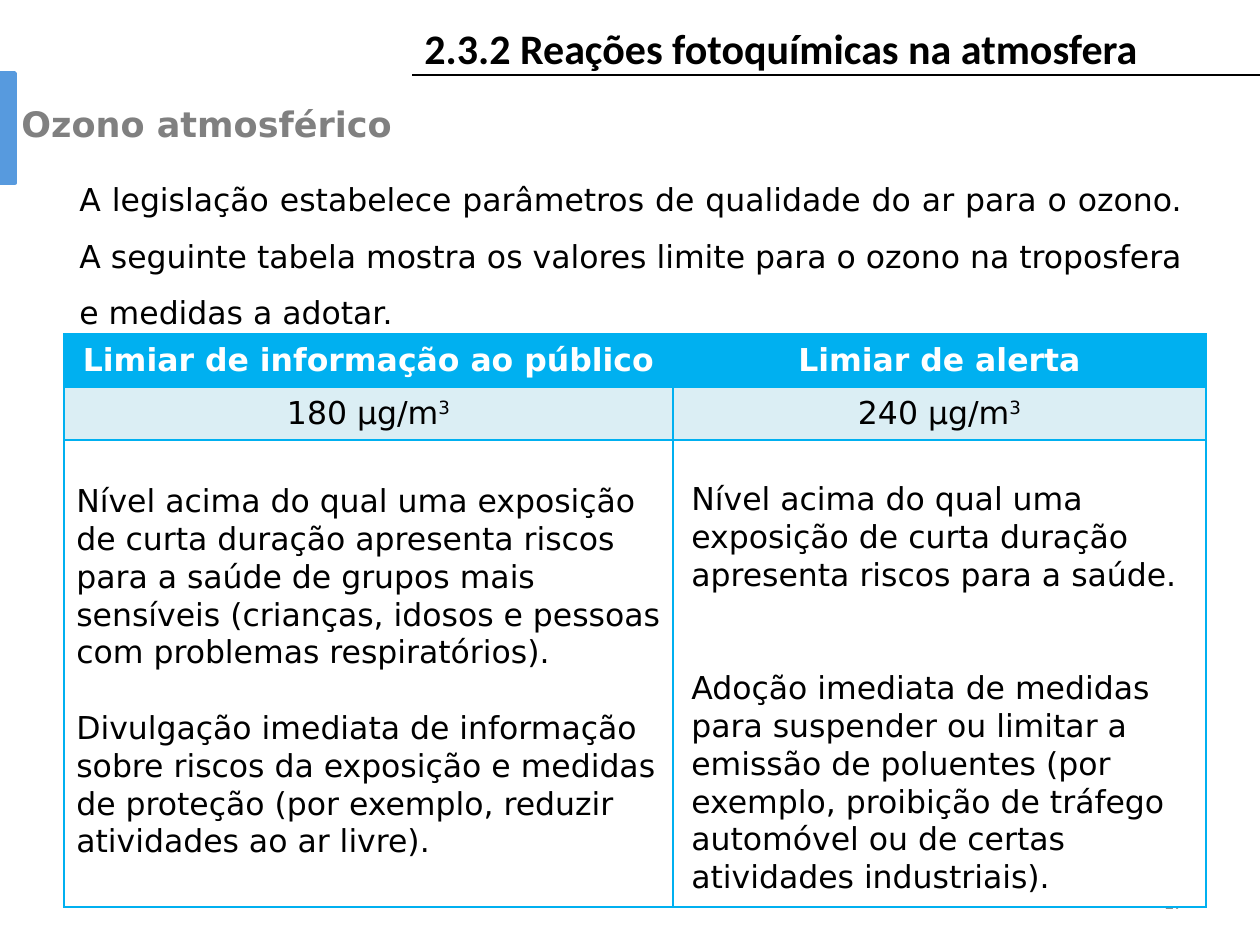
"""Build the slide on ozone limits and the measures to adopt."""
import pptx
import pptx.dml.color
import pptx.enum.shapes
import pptx.enum.text
import pptx.oxml
import pptx.oxml.ns
import pptx.util

ALIGN = pptx.enum.text.PP_ALIGN
MIDDLE = pptx.enum.text.MSO_ANCHOR.MIDDLE
THEME = dict(
    black="000000", white="FFFFFF", grey="808080", pale="8C8C8C",
    bar="579ADE", cyan="00B0F0", ice="DBEEF4",
    head="Calibri", body="DejaVu Sans",
    title=24, topic=20, text=18, small=12, gap=21.6,
)

TITLE = "2.3.2 Reações fotoquímicas na atmosfera"
TOPIC = "Ozono atmosférico"
INTRO = (
    "A legislação estabelece parâmetros de qualidade do ar para o ozono. "
    "A seguinte tabela mostra os valores limite para o ozono na troposfera "
    "e medidas a adotar."
)
NUMBER = "17"
ROWS = [
    ("Limiar de informação ao público", "Limiar de alerta"),
    ("180 µg/m^3", "240 µg/m^3"),
    ("", ""),
]
FILLS = ["cyan", "ice", "white"]
WIDTHS = [609, 533]
HEIGHTS = [53, 53, 467]
NOTES = [
    ((64, 475, 615, 394), 1, [
        "Nível acima do qual uma exposição de curta duração apresenta riscos "
        "para a saúde de grupos mais sensíveis (crianças, idosos e pessoas "
        "com problemas respiratórios).",
        "Divulgação imediata de informação sobre riscos da exposição e medidas "
        "de proteção (por exemplo, reduzir atividades ao ar livre).",
    ]),
    ((679, 473, 527, 432), 2, [
        "Nível acima do qual uma exposição de curta duração apresenta riscos "
        "para a saúde.",
        "Adoção imediata de medidas para suspender ou limitar a emissão de "
        "poluentes (por exemplo, proibição de tráfego automóvel ou de certas "
        "atividades industriais).",
    ]),
]


def px(count):
    return round(count * 914400 / 126)


def area(*sides):
    return [px(side) for side in sides]


def color(name):
    return pptx.dml.color.RGBColor.from_string(THEME[name])


def write(frame, *texts, size="text", font="body", ink="black", bold=False,
          align=ALIGN.LEFT, lead=None, gap=0):
    frame.word_wrap = True
    for spot, text in enumerate(texts):
        para = frame.add_paragraph() if spot else frame.paragraphs[0]
        para.alignment = align
        if lead:
            para.line_spacing = lead
        if spot:
            para.space_before = pptx.util.Pt(gap)
        for order, part in enumerate(text.split("^")):
            run = para.add_run()
            run.text = part
            run.font.name = THEME[font]
            run.font.size = pptx.util.Pt(THEME[size])
            run.font.bold = bold
            run.font.color.rgb = color(ink)
            if order:
                run.font._element.set("baseline", "30000")


def label(slide, box, *texts, anchor=None, **form):
    frame = slide.shapes.add_textbox(*area(*box)).text_frame
    frame.vertical_anchor = anchor
    write(frame, *texts, **form)


def border(cell):
    props = cell._tc.get_or_add_tcPr()
    for side in "LRTB":
        props.append(pptx.oxml.parse_xml(
            f'<a:ln{side} {pptx.oxml.ns.nsdecls("a")} w="12700"><a:solidFill>'
            f'<a:srgbClr val="{THEME["cyan"]}"/></a:solidFill></a:ln{side}>'))


def frame_top(slide):
    kind = pptx.enum.shapes.MSO_CONNECTOR.STRAIGHT
    rule = slide.shapes.add_connector(kind, *area(1260, 75, 412, 75))
    rule.line.color.rgb = color("black")
    rule.line.width = pptx.util.Pt(0.75)
    rule._element.spPr.append(pptx.oxml.parse_xml(
        f'<a:effectLst {pptx.oxml.ns.nsdecls("a")}/>'))
    label(slide, (412, 16, 750, 63), TITLE, size="title", font="head", bold=True)
    shape = pptx.enum.shapes.MSO_SHAPE.RECTANGLE
    bar = slide.shapes.add_shape(shape, *area(-1, 73, 16, 110))
    bar.shadow.inherit = False
    bar.fill.solid()
    bar.fill.fore_color.rgb = bar.line.color.rgb = color("bar")
    bar.line.width = pptx.util.Pt(2)


def limits(slide):
    box = area(64, 334, sum(WIDTHS), sum(HEIGHTS))
    table = slide.shapes.add_table(len(ROWS), len(WIDTHS), *box).table
    table.horz_banding = False
    for column, width in zip(table.columns, WIDTHS):
        column.width = px(width)
    for spot, (row, texts) in enumerate(zip(table.rows, ROWS)):
        row.height = px(HEIGHTS[spot])
        for cell, text in zip(row.cells, texts):
            border(cell)
            cell.fill.solid()
            cell.fill.fore_color.rgb = color(FILLS[spot])
            cell.vertical_anchor = MIDDLE
            if text:
                write(cell.text_frame, text, align=ALIGN.CENTER,
                      bold=spot == 0, ink="black" if spot else "white")


def main():
    deck = pptx.Presentation()
    deck.slide_width, deck.slide_height = area(1260, 945)
    slide = deck.slides.add_slide(deck.slide_layouts[6])
    frame_top(slide)
    label(slide, (903, 876, 294, 50), NUMBER, size="small", font="head",
          ink="pale", align=ALIGN.RIGHT, anchor=MIDDLE)
    label(slide, (9, 96, 804, 62), TOPIC, size="topic", ink="grey", bold=True)
    label(slide, (67, 155, 1128, 199), INTRO, align=ALIGN.JUSTIFY, lead=1.5)
    limits(slide)
    for box, lines, texts in NOTES:
        label(slide, box, *texts, gap=lines * THEME["gap"])
    deck.save("out.pptx")


if __name__ == "__main__":
    main()
